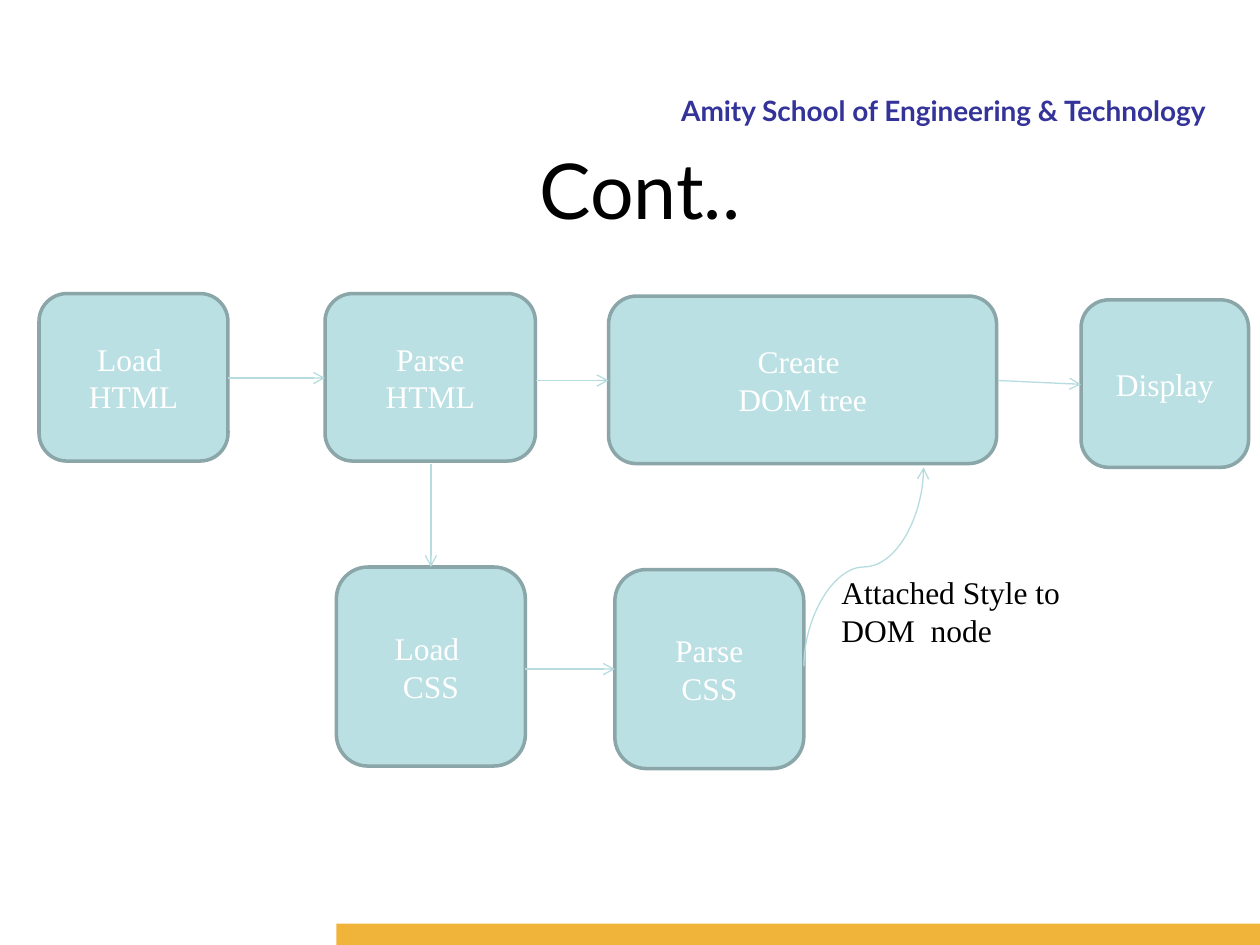
from lxml.etree import SubElement
from pptx import Presentation
from pptx.dml.color import RGBColor
from pptx.enum.shapes import MSO_CONNECTOR, MSO_SHAPE
from pptx.enum.text import MSO_ANCHOR, MSO_AUTO_SIZE, PP_ALIGN
from pptx.oxml.ns import qn
from pptx.util import Inches, Pt

WHITE = RGBColor(0xFF, 0xFF, 0xFF)
BLACK = RGBColor(0x00, 0x00, 0x00)
NAVY = RGBColor(0x33, 0x33, 0x99)
GOLD = RGBColor(0xF1, 0xB4, 0x3B)
AQUA = RGBColor(0xBB, 0xE0, 0xE3)
AQUA_EDGE = RGBColor(0x8A, 0xA6, 0xA8)
AQUA_ARROW = RGBColor(0xB6, 0xDC, 0xDF)
HEADING_FONT = "Lato"
BODY_FONT = "Times New Roman"

# Lines of text, then left, top, width, height
STEPS = [
    (["Load ", "HTML"], (0.31, 2.33, 1.5, 1.33)),
    (["Parse", "HTML"], (2.58, 2.33, 1.67, 1.33)),
    (["Create ", "DOM tree"], (4.83, 2.35, 3.08, 1.33)),
    (["Display"], (8.58, 2.38, 1.33, 1.33)),
    (["Load ", "CSS"], (2.67, 4.5, 1.5, 1.58)),
    (["Parse", "CSS"], (4.88, 4.52, 1.5, 1.58)),
]

# Start x, y and end x, y
ARROWS = [
    (1.81, 3, 2.58, 3),
    (4.25, 3.02, 4.83, 3.02),
    (7.92, 3.02, 8.58, 3.05),
    (3.42, 3.68, 3.42, 4.5),
    (4.17, 5.31, 4.88, 5.31),
]


def inches(values):
    return [Inches(value) for value in values]


def write(frame, lines, font, size, color, align, bold=False):
    frame.word_wrap = True
    for index, line in enumerate(lines):
        para = frame.paragraphs[0] if index == 0 else frame.add_paragraph()
        para.text = line
        para.alignment = align
        para.font.name = font
        para.font.size = Pt(size)
        para.font.bold = bold
        para.font.color.rgb = color


def add_label(page, box, text, font, size, color, align, bold=False):
    label = page.shapes.add_textbox(*inches(box))
    write(label.text_frame, [text], font, size, color, align, bold)


def add_title(page, box, text):
    title = page.shapes.title
    title.left, title.top, title.width, title.height = inches(box)
    title.text_frame.auto_size = MSO_AUTO_SIZE.NONE
    title.text_frame.vertical_anchor = MSO_ANCHOR.TOP
    write(title.text_frame, [text], HEADING_FONT, 44, BLACK, PP_ALIGN.CENTER)


def add_footer_bar(page, box):
    bar = page.shapes.add_shape(MSO_SHAPE.RECTANGLE, *inches(box))
    bar.shadow.inherit = False
    bar.fill.solid()
    bar.fill.fore_color.rgb = GOLD
    bar.line.fill.background()


def add_step(page, box, lines):
    step = page.shapes.add_shape(MSO_SHAPE.ROUNDED_RECTANGLE, *inches(box))
    step.shadow.inherit = False
    step.fill.solid()
    step.fill.fore_color.rgb = AQUA
    step.line.color.rgb = AQUA_EDGE
    step.line.width = Pt(2)
    step.text_frame.vertical_anchor = MSO_ANCHOR.MIDDLE
    write(step.text_frame, lines, BODY_FONT, 18, WHITE, PP_ALIGN.CENTER)


def add_arrow(page, ends, kind=MSO_CONNECTOR.STRAIGHT):
    arrow = page.shapes.add_connector(kind, *inches(ends))
    arrow.line.color.rgb = AQUA_ARROW
    arrow.line.width = Pt(0.75)
    properties = arrow.element.spPr
    SubElement(properties.find(qn("a:ln")), qn("a:tailEnd"), type="arrow")
    SubElement(properties, qn("a:effectLst"))
    return arrow


def add_curved_arrow(page, start, end):
    # The curve leaves and arrives vertically, so it is laid flat and turned 90 degrees
    middle_x, middle_y = (start[0] + end[0]) / 2, (start[1] + end[1]) / 2
    half_width, half_height = (start[1] - end[1]) / 2, (end[0] - start[0]) / 2
    flat = (middle_x + half_width, middle_y + half_height,
            middle_x - half_width, middle_y - half_height)
    arrow = add_arrow(page, flat, MSO_CONNECTOR.CURVE)
    arrow.element.spPr.find(qn("a:xfrm")).set("rot", str(90 * 60000))


def add_flow(page):
    for lines, box in STEPS:
        add_step(page, box, lines)
    add_curved_arrow(page, (6.38, 5.29), (7.33, 3.71))
    for ends in ARROWS:
        add_arrow(page, ends)
    add_label(page, (6.58, 4.5, 2.42, 1.01), "Attached Style to DOM  node",
              BODY_FONT, 18, BLACK, PP_ALIGN.LEFT)


def main():
    deck = Presentation()
    deck.slide_width, deck.slide_height = Inches(10), Inches(7.5)
    page = deck.slides.add_slide(deck.slide_layouts[5])

    # Page frame
    add_label(page, (3.42, 0.69, 6.25, 0.33), "Amity School of Engineering & Technology",
              HEADING_FONT, 16, NAVY, PP_ALIGN.RIGHT, bold=True)
    add_footer_bar(page, (2.67, 7.33, 7.33, 0.17))

    # Content
    add_title(page, (0.58, 1.08, 9, 0.62), "Cont..")
    add_flow(page)
    deck.save("out.pptx")


if __name__ == "__main__":
    main()
